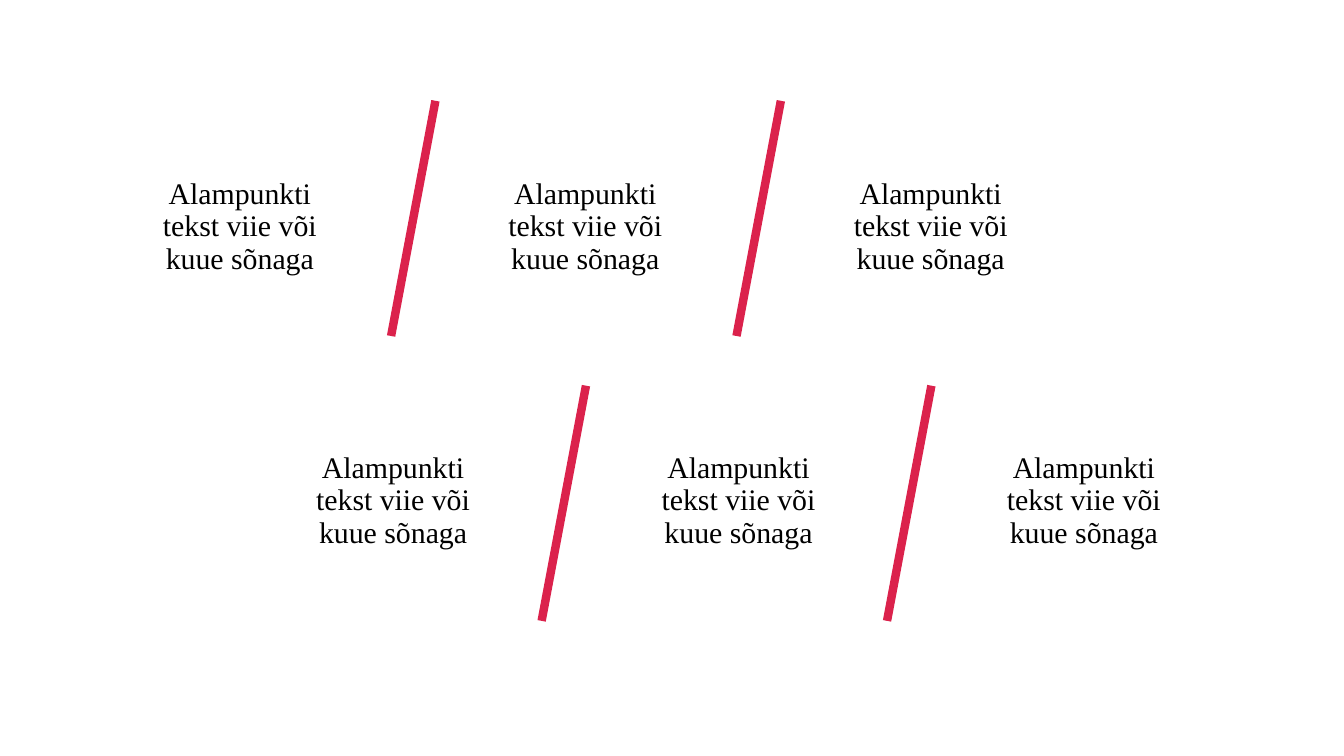
import pptx
import pptx.util
import pptx.dml.color
import pptx.enum.shapes
import pptx.enum.text
from lxml import etree
from pptx.oxml.ns import qn
from pptx.util import Inches, Pt

RGB = pptx.dml.color.RGBColor
COLORS = {"text": "000000", "slash": "DB224C"}
TEXT = "Alampunkti tekst viie või kuue sõnaga"
STEP = 2.57

# Each row: left and top of the first text, left and top of the first slash
ROWS = [(0.93, 1.14, 2.91, 0.75), (2.07, 3.18, 4.03, 2.87)]

prs = pptx.Presentation()
prs.slide_width = Inches(10)
prs.slide_height = Inches(10) * 9 // 16
slide = prs.slides.add_slide(prs.slide_layouts[6])

for left, top, _, _ in ROWS:
    for col in range(3):
        box = slide.shapes.add_textbox(
            Inches(left + col * STEP), Inches(top), Inches(1.71), Inches(1.1))
        frame = box.text_frame
        frame.word_wrap = True
        frame.margin_left = frame.margin_right = Inches(0.15)
        frame.vertical_anchor = pptx.enum.text.MSO_ANCHOR.MIDDLE
        frame.text = TEXT
        para = frame.paragraphs[0]
        para.alignment = pptx.enum.text.PP_ALIGN.CENTER
        para.line_spacing = 0.9
        font = para.runs[0].font
        font.name = "Times New Roman"
        font.size = Pt(16)
        font.color.rgb = RGB.from_string(COLORS["text"])

for _, _, left, top in ROWS:
    for col in range(2):
        x = left + col * STEP
        slash = slide.shapes.add_connector(
            pptx.enum.shapes.MSO_CONNECTOR.STRAIGHT,
            Inches(x), Inches(top + 1.75), Inches(x + 0.33), Inches(top))
        slash.line.color.rgb = RGB.from_string(COLORS["slash"])
        slash.line.width = Pt(4.5)
        etree.SubElement(slash._element.spPr, qn("a:effectLst"))

prs.save("out.pptx")
